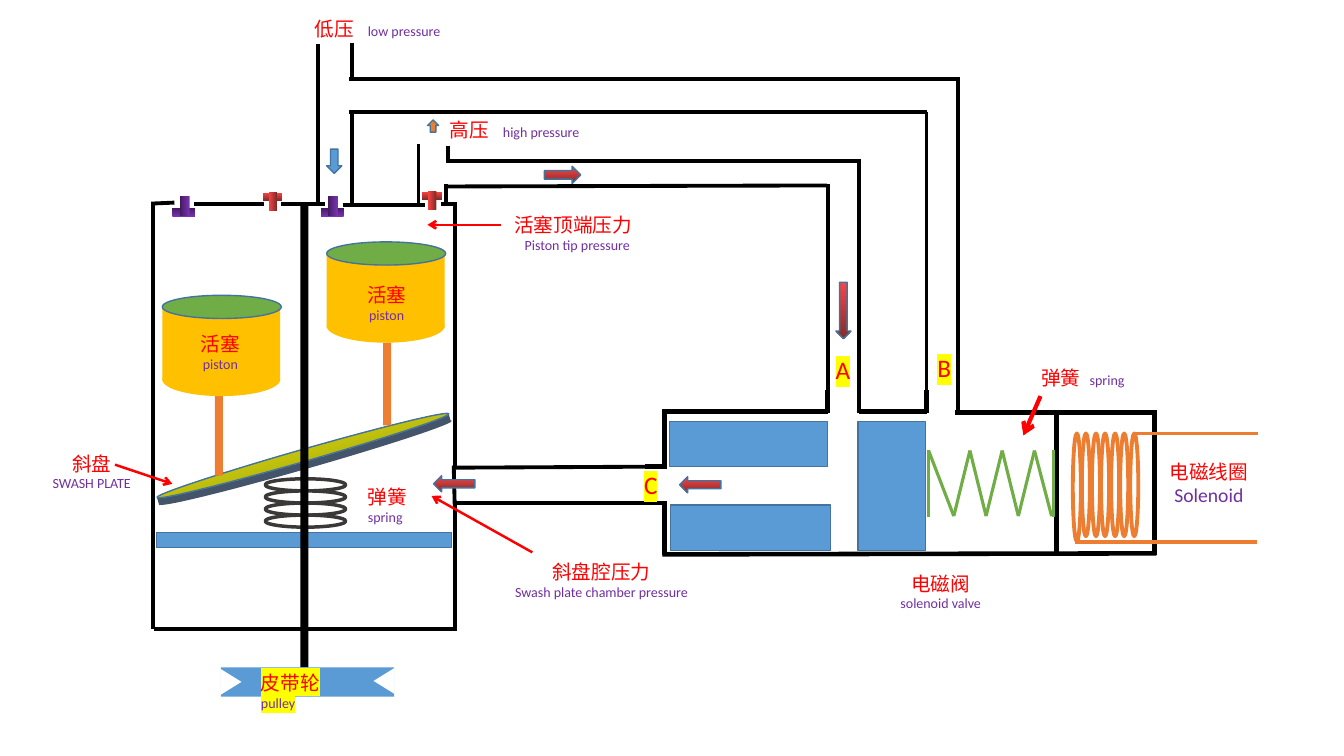
from itertools import pairwise

from lxml.etree import SubElement
from pptx import Presentation
from pptx.dml.color import RGBColor
from pptx.enum.shapes import MSO_CONNECTOR, MSO_SHAPE as Shape
from pptx.enum.text import MSO_AUTO_SIZE, PP_ALIGN as Align
from pptx.oxml.ns import qn
from pptx.util import Emu, Pt

PX = 9144
BLACK, WHITE, RED, PURPLE = "000000", "FFFFFF", "FF0000", "7030A0"
BLUE, OUTLINE, GREEN, ORANGE = "5B9BD5", "43739E", "70AD47", "ED7D31"
GOLD, SLATE, GRAY, YELLOW = "FFC000", "44546A", "3B3838", "FFFF00"
RED_FADE = ("FE4444", "832B2B")
PURPLE_FADE = ("7B32B2", "401A5D")
YELLOW_FADE = ("FBFB11", "838309")


def px(value):
    return Emu(value * PX)


def color(hex_value):
    return RGBColor.from_string(hex_value)


def paint(fill, value):
    if value is None:
        fill.background()
    elif isinstance(value, tuple):
        fill.gradient()
        fill.gradient_angle = 270
        for stop, hex_value in zip(fill.gradient_stops, value):
            stop.color.rgb = color(hex_value)
    else:
        fill.solid()
        fill.fore_color.rgb = color(value)


def add_part(slide, kind, box, fill, outline=None, width=1, rotation=0, flip=False):
    shape = slide.shapes.add_shape(kind, *map(px, box))
    shape.shadow.inherit = False
    shape.rotation = rotation
    paint(shape.fill, fill)
    paint(shape.line.fill, outline)
    if outline:
        shape.line.width = Pt(width)
    if flip:
        shape._element.spPr.get_or_add_xfrm().set("flipV", "1")
    return shape


def add_line(slide, ends, hex_value=BLACK, width=2.75, arrow=False):
    connector = slide.shapes.add_connector(MSO_CONNECTOR.STRAIGHT, *map(px, ends))
    connector.line.color.rgb = color(hex_value)
    connector.line.width = Pt(width)
    if arrow:
        SubElement(connector.get_or_add_ln(), qn("a:tailEnd"), type="arrow")
    SubElement(connector._element.spPr, qn("a:effectLst"))


def add_lines(slide, lines, hex_value=BLACK, width=2.75):
    for ends in lines:
        add_line(slide, ends, hex_value, width)


def style(font, size, hex_value):
    font.name = "Calibri"
    font.size = Pt(size)
    font.color.rgb = color(hex_value)


def highlight(run):
    mark = SubElement(run._r.get_or_add_rPr(), qn("a:highlight"))
    SubElement(mark, qn("a:srgbClr"), val=YELLOW)


def add_frame(slide, box, wrap):
    frame = slide.shapes.add_textbox(*map(px, box)).text_frame
    frame.word_wrap = wrap
    frame.auto_size = MSO_AUTO_SIZE.NONE if wrap else MSO_AUTO_SIZE.SHAPE_TO_FIT_TEXT
    return frame


def add_label(slide, box, chinese, english, align=Align.CENTER, size=10, indent=0):
    frame = add_frame(slide, box, False)
    first, second = frame.paragraphs[0], frame.add_paragraph()
    second._p.get_or_add_pPr().set("marL", str(px(indent)))
    for paragraph, text, points, hex_value in (
        (first, chinese, 14, RED), (second, english, size, PURPLE)
    ):
        paragraph.alignment = align
        paragraph.add_run().text = text
        style(paragraph.font, points, hex_value)


def add_inline_label(slide, box, chinese, english, tab):
    paragraph = add_frame(slide, box, True).paragraphs[0]
    tabs = SubElement(paragraph._p.get_or_add_pPr(), qn("a:tabLst"))
    SubElement(tabs, qn("a:tab"), pos=str(px(tab)), algn="l")
    for text, size, hex_value in ((chinese + "\t", 14, RED), (english, 10, PURPLE)):
        run = paragraph.add_run()
        run.text = text
        style(run.font, size, hex_value)


def add_port(slide, box, letter):
    paragraph = add_frame(slide, box, False).paragraphs[0]
    run = paragraph.add_run()
    run.text = letter
    highlight(run)
    style(paragraph.font, 18, RED)


def draw_valve(slide):
    for box in ((851, 418, 67, 128), (665, 501, 159, 45), (664, 418, 157, 45)):
        add_part(slide, Shape.RECTANGLE, box, BLUE, OUTLINE)
    add_lines(slide, [
        (657, 550, 1147, 549), (657, 408, 821, 408), (852, 408, 919, 408),
        (947, 409, 1148, 409), (659, 409, 659, 463), (659, 497, 659, 551),
        (1048, 408, 1048, 550), (1145, 409, 1145, 551),
        (640, 463, 662, 463), (640, 499, 662, 499),
    ], width=3.25)
    add_lines(slide, [(x, 387, x, 410) for x in (821, 852, 919, 950)], width=3.25)
    zigzag = [(921, 447)]
    zigzag += [(946 + 97 * i // 6, 447 if i % 2 else 512) for i in range(7)]
    add_lines(slide, [start + end for start, end in pairwise(zigzag)], GREEN, 2.25)
    add_lines(slide, [(x, 446, x, 513) for x in (921, 1045)], GREEN, 2.25)


def draw_solenoid(slide):
    for i in range(7):
        box = (1064 + 19 * i // 2, 430, 8, 102 if i else 107)
        add_part(slide, Shape.OVAL, box, None, ORANGE, 2.75)
    add_lines(slide, [(1124, 430, 1248, 430), (1066, 538, 1247, 538)], ORANGE)


def draw_swash_plate(slide):
    add_part(slide, Shape.OVAL, (153, 453, 301, 12), SLATE, rotation=344)
    add_part(slide, Shape.RECTANGLE, (151, 452, 301, 8), SLATE, rotation=344)
    add_part(slide, Shape.OVAL, (150, 446, 301, 12), YELLOW_FADE, OUTLINE, rotation=344)
    add_part(slide, Shape.RECTANGLE, (155, 528, 293, 15), BLUE, OUTLINE)


def draw_pipes(slide):
    add_lines(slide, [
        (449, 464, 643, 463), (449, 499, 643, 499), (415, 143, 415, 203),
        (442, 183, 442, 201), (444, 145, 444, 162), (346, 78, 949, 78),
        (346, 111, 919, 111), (919, 111, 919, 388), (950, 76, 950, 388),
        (444, 160, 854, 160), (441, 185, 820, 184), (821, 183, 821, 388),
        (852, 161, 852, 387), (315, 44, 315, 203), (349, 110, 349, 201),
        (349, 43, 349, 79),
    ])


def draw_housing(slide):
    add_part(slide, Shape.RECTANGLE, (298, 204, 8, 458), BLACK)
    add_lines(slide, [
        (150, 202, 173, 201), (192, 202, 262, 202), (279, 202, 322, 202),
        (340, 203, 422, 203), (437, 202, 453, 202), (153, 624, 451, 624),
        (152, 201, 152, 624), (451, 201, 451, 463), (451, 497, 451, 626),
        (450, 462, 451, 501),
    ])
    for x, y in ((419, 190), (261, 191)):
        for drop, rotation in ((0, 180), (5, 90)):
            add_part(slide, Shape.RECTANGLE, (x, y + drop, 19, 8), RED_FADE,
                     rotation=rotation, flip=True)
    for x in (318, 171):
        add_part(slide, Shape.RECTANGLE, (x, 206, 23, 9), PURPLE_FADE, flip=True)
        add_part(slide, Shape.RECTANGLE, (x + 2, 199, 20, 10), PURPLE_FADE,
                 rotation=270, flip=True)


def draw_pulley(slide):
    add_part(slide, Shape.RECTANGLE, (219, 662, 172, 29), BLUE)
    for x, y, rotation in ((368, 665, 270), (216, 666, 90)):
        add_part(slide, Shape.FLOWCHART_EXTRACT, (x, y, 26, 21), WHITE, rotation=rotation)
    paragraph = add_frame(slide, (249, 661, 113, 34), False).paragraphs[0]
    chinese = paragraph.add_run()
    chinese.text = "皮带轮"
    paragraph.add_line_break()
    english = paragraph.add_run()
    english.text = "pulley"
    style(chinese.font, 14, RED)
    style(english.font, 10, PURPLE)
    for run in (chinese, english):
        mark = run._r.rPr.find(qn("a:latin"))
        highlight(run)
        run._r.rPr.append(mark)


def draw_piston(slide, x, top, rod_x, rod_length, label_box):
    add_part(slide, Shape.RECTANGLE, (rod_x, top + 100, 8, rod_length), ORANGE)
    add_part(slide, Shape.OVAL, (x, top + 67, 117, 33), GOLD)
    add_part(slide, Shape.RECTANGLE, (x, top + 11, 117, 74), GOLD)
    add_part(slide, Shape.OVAL, (x, top, 118, 23), GREEN, OUTLINE)
    add_label(slide, label_box, "活塞", "piston")


def draw_labels(slide):
    add_inline_label(slide, (302, 12, 153, 31), "低压", "low pressure", 53)
    add_inline_label(slide, (436, 112, 168, 32), "高压", "high pressure", 53)
    add_inline_label(slide, (1023, 358, 127, 30), "弹簧", "spring", 48)
    add_label(slide, (41, 443, 100, 50), "斜盘", "SWASH PLATE")
    add_label(slide, (355, 476, 59, 50), "弹簧", "spring", Align.LEFT)
    add_label(slide, (500, 551, 193, 50), "斜盘腔压力", "Swash plate chamber pressure")
    add_label(slide, (883, 562, 100, 50), "电磁阀", "solenoid valve")
    add_label(slide, (500, 206, 137, 50), "活塞顶端压力", "Piston tip pressure", indent=8)
    add_label(slide, (1150, 451, 98, 57), "电磁线圈", "Solenoid", size=14)
    add_port(slide, (819, 347, 34, 40), "A")
    add_port(slide, (920, 345, 34, 40), "B")
    add_port(slide, (629, 461, 33, 40), "C")


def draw_arrows(slide):
    for ends in ((528, 548, 428, 492), (114, 461, 171, 480), (497, 223, 424, 223)):
        add_line(slide, ends, RED, 1.75, arrow=True)
    add_line(slide, (1032, 393, 1015, 432), RED, 3, arrow=True)
    for kind, box, fill in (
        (Shape.DOWN_ARROW, (324, 148, 15, 24), BLUE),
        (Shape.UP_ARROW, (424, 119, 11, 12), ORANGE),
        (Shape.DOWN_ARROW, (829, 280, 15, 56), RED_FADE),
        (Shape.RIGHT_ARROW, (540, 165, 36, 17), RED_FADE),
        (Shape.LEFT_ARROW, (674, 473, 41, 16), RED_FADE),
        (Shape.LEFT_ARROW, (430, 472, 41, 16), RED_FADE),
    ):
        add_part(slide, kind, box, fill, OUTLINE)


def main():
    presentation = Presentation()
    presentation.slide_width, presentation.slide_height = px(1333), px(750)
    slide = presentation.slides.add_slide(presentation.slide_layouts[6])
    for i in range(4):
        add_part(slide, Shape.OVAL, (263, 475 + 12 * i, 80, 12), WHITE, GRAY, 2.5)
    for draw in (draw_valve, draw_solenoid, draw_swash_plate, draw_pipes,
                 draw_housing, draw_pulley):
        draw(slide)
    draw_piston(slide, 161, 293, 213, 79, (189, 324, 59, 50))
    draw_piston(slide, 324, 240, 380, 82, (354, 276, 59, 50))
    draw_labels(slide)
    draw_arrows(slide)
    presentation.save("out.pptx")


if __name__ == "__main__":
    main()
